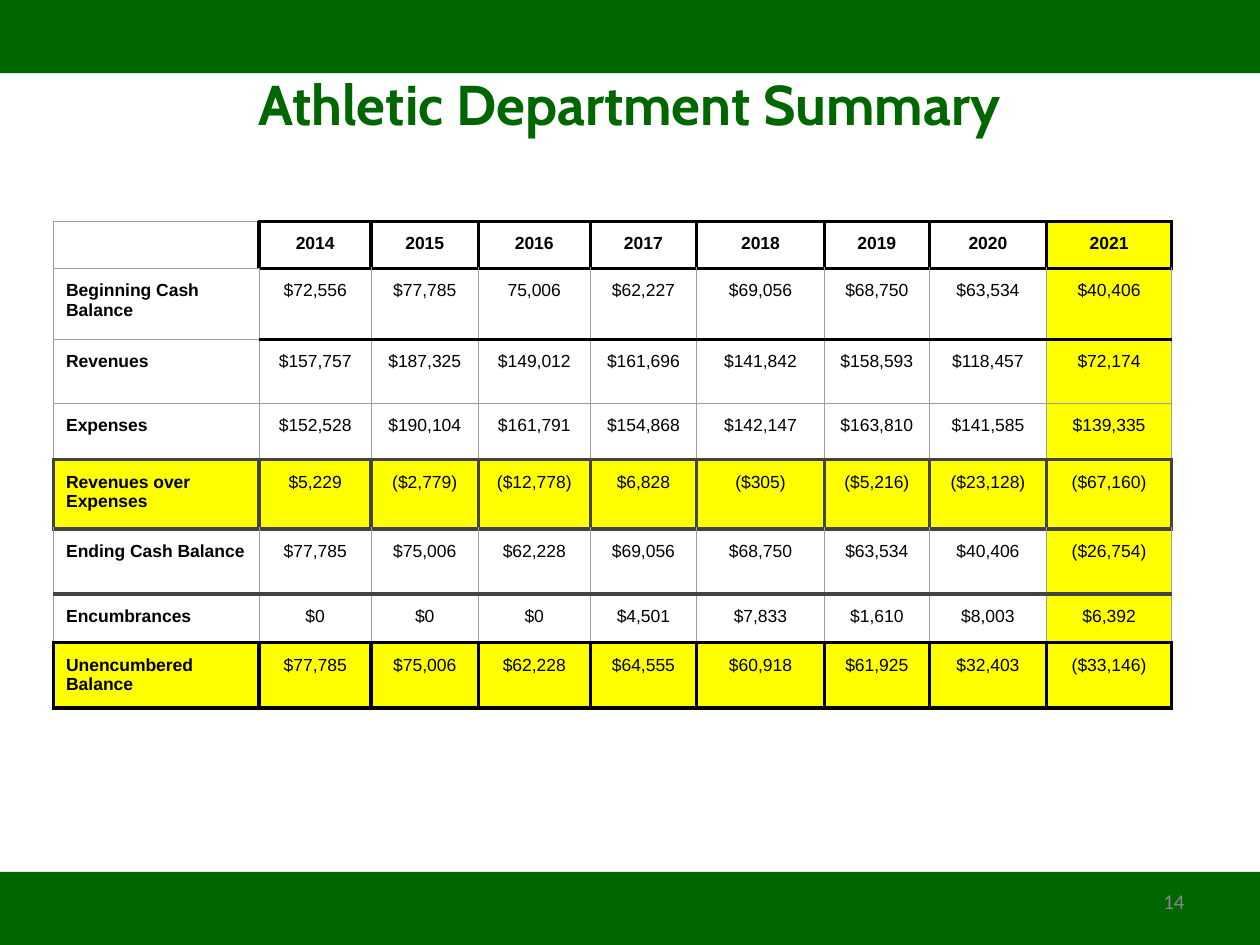
from dataclasses import dataclass

from lxml import etree
from pptx import Presentation
from pptx.dml.color import RGBColor
from pptx.enum.shapes import MSO_SHAPE
from pptx.enum.text import MSO_ANCHOR, MSO_AUTO_SIZE, PP_ALIGN
from pptx.oxml.ns import qn
from pptx.util import Pt

RECT = MSO_SHAPE.RECTANGLE
TOP, MIDDLE = MSO_ANCHOR.TOP, MSO_ANCHOR.MIDDLE
NO_AUTOFIT = MSO_AUTO_SIZE.NONE
LEFT, CENTER, RIGHT = PP_ALIGN.LEFT, PP_ALIGN.CENTER, PP_ALIGN.RIGHT


@dataclass(frozen=True)
class Theme:
    green: str = "006600"
    yellow: str = "FFFF00"
    black: str = "000000"
    number_grey: str = "888888"
    title_size: float = 32
    table_size: float = 10
    number_size: float = 12
    title_font: str = "Cabin"
    table_font: str = "Arial"
    number_font: str = "Calibri"


@dataclass(frozen=True)
class Line:
    color: str
    width: float


@dataclass(frozen=True)
class Row:
    label: str
    values: str
    height: float
    top: Line
    sides: Line
    highlighted: bool = False


@dataclass(frozen=True)
class Band:
    top: float
    height: float


THEME = Theme()
THIN = Line("9E9E9E", 0.75)
DARK = Line("434343", 2.25)
BLACK = Line(THEME.black, 2.25)

SLIDE_W, SLIDE_H = 720, 540
BAND_H = 41.8
BANDS = [Band(0, BAND_H), Band(SLIDE_H - BAND_H, BAND_H)]
TABLE_LEFT, TABLE_TOP = 30.6, 126.5
CELL_MARGIN = 7.2
COLUMN_WIDTHS = [117.5, 64, 61.2, 64, 60.8, 73, 60, 67, 71.5]
ROWS = [
    Row("", "2014 2015 2016 2017 2018 2019 2020 2021", 26.8, BLACK, BLACK),
    Row("Beginning Cash Balance",
        "$72,556 $77,785 75,006 $62,227 $69,056 $68,750 $63,534 $40,406",
        40.6, BLACK, THIN),
    Row("Revenues",
        "$157,757 $187,325 $149,012 $161,696 $141,842 $158,593 $118,457 $72,174",
        36.6, BLACK, THIN),
    Row("Expenses",
        "$152,528 $190,104 $161,791 $154,868 $142,147 $163,810 $141,585 $139,335",
        32.2, THIN, THIN),
    Row("Revenues over Expenses",
        "$5,229 ($2,779) ($12,778) $6,828 ($305) ($5,216) ($23,128) ($67,160)",
        39.6, DARK, DARK, True),
    Row("Ending Cash Balance",
        "$77,785 $75,006 $62,228 $69,056 $68,750 $63,534 $40,406 ($26,754)",
        37.2, DARK, THIN),
    Row("Encumbrances",
        "$0 $0 $0 $4,501 $7,833 $1,610 $8,003 $6,392",
        27.8, DARK, THIN),
    Row("Unencumbered Balance",
        "$77,785 $75,006 $62,228 $64,555 $60,918 $61,925 $32,403 ($33,146)",
        37.3, BLACK, BLACK, True),
]


def rgb(color: str) -> RGBColor:
    return RGBColor.from_string(color)


def style_paragraph(p, font: str, size: float, color: str, bold: bool, align) -> None:
    p.alignment = align
    p.font.name = font
    p.font.size = Pt(size)
    p.font.bold = bold
    p.font.color.rgb = rgb(color)


def place(sp, left: float, top: float, width: float, height: float) -> None:
    sp.left, sp.top, sp.width, sp.height = Pt(left), Pt(top), Pt(width), Pt(height)


def add_band(s, band: Band) -> None:
    sp = s.shapes.add_shape(RECT, 0, Pt(band.top), Pt(SLIDE_W), Pt(band.height))
    sp.shadow.inherit = False
    sp.fill.solid()
    sp.fill.fore_color.rgb = rgb(THEME.green)
    sp.line.fill.background()


def add_border(cell, side: str, line: Line) -> None:
    ln = etree.SubElement(cell._tc.get_or_add_tcPr(), qn(f"a:ln{side}"),
                          w=str(Pt(line.width)), cap="flat", cmpd="sng")
    fill = etree.SubElement(ln, qn("a:solidFill"))
    etree.SubElement(fill, qn("a:srgbClr"), val=line.color)
    etree.SubElement(ln, qn("a:prstDash"), val="solid")


def horizontal_line(edge: int, col: int) -> Line:
    if col == 0 and edge < 3:
        return THIN
    return ROWS[edge].top if edge < len(ROWS) else BLACK


def vertical_line(row: int, edge: int) -> Line:
    return THIN if row == 0 and edge == 0 else ROWS[row].sides


def fill_cell(cell, row: int, col: int, text: str) -> None:
    add_border(cell, "L", vertical_line(row, col))
    add_border(cell, "R", vertical_line(row, col + 1))
    add_border(cell, "T", horizontal_line(row, col))
    add_border(cell, "B", horizontal_line(row + 1, col))
    if ROWS[row].highlighted or col == len(COLUMN_WIDTHS) - 1:
        cell.fill.solid()
        cell.fill.fore_color.rgb = rgb(THEME.yellow)
    else:
        cell.fill.background()
    cell.margin_left = cell.margin_right = Pt(CELL_MARGIN)
    cell.margin_top = cell.margin_bottom = Pt(CELL_MARGIN)
    p = cell.text_frame.paragraphs[0]
    style_paragraph(p, THEME.table_font, THEME.table_size, THEME.black,
                    row == 0 or col == 0, CENTER if col else LEFT)
    if text:
        p.add_run().text = text
    else:
        etree.SubElement(p._p, qn("a:endParaRPr"), sz=str(THEME.table_size * 100))


def add_summary_table(s) -> None:
    table = s.shapes.add_table(
        len(ROWS), len(COLUMN_WIDTHS), Pt(TABLE_LEFT), Pt(TABLE_TOP),
        Pt(sum(COLUMN_WIDTHS)), Pt(sum(row.height for row in ROWS))).table
    table.first_row = table.horz_banding = False
    for column, width in zip(table.columns, COLUMN_WIDTHS):
        column.width = Pt(width)
    for i, row in enumerate(ROWS):
        table.rows[i].height = Pt(row.height)
        for j, text in enumerate([row.label, *row.values.split()]):
            fill_cell(table.cell(i, j), i, j, text)


def set_title(s, text: str) -> None:
    sp = s.shapes.title
    place(sp, 12, 36, 696, 48)
    tf = sp.text_frame
    tf.text = text
    tf.auto_size = NO_AUTOFIT
    tf.vertical_anchor = TOP
    style_paragraph(tf.paragraphs[0], THEME.title_font, THEME.title_size,
                    THEME.green, True, CENTER)


def add_page_number(s, text: str) -> None:
    sp = s.shapes.add_textbox(Pt(516), Pt(500.5), Pt(168), Pt(28.75))
    tf = sp.text_frame
    tf.word_wrap = True
    tf.vertical_anchor = MIDDLE
    tf.text = text
    style_paragraph(tf.paragraphs[0], THEME.number_font, THEME.number_size,
                    THEME.number_grey, False, RIGHT)


def main() -> None:
    prs = Presentation()
    prs.slide_width, prs.slide_height = Pt(SLIDE_W), Pt(SLIDE_H)
    s = prs.slides.add_slide(prs.slide_layouts[5])
    add_summary_table(s)
    for band in BANDS:
        add_band(s, band)
    set_title(s, "Athletic Department Summary")
    add_page_number(s, "14")
    prs.save("out.pptx")


if __name__ == "__main__":
    main()
